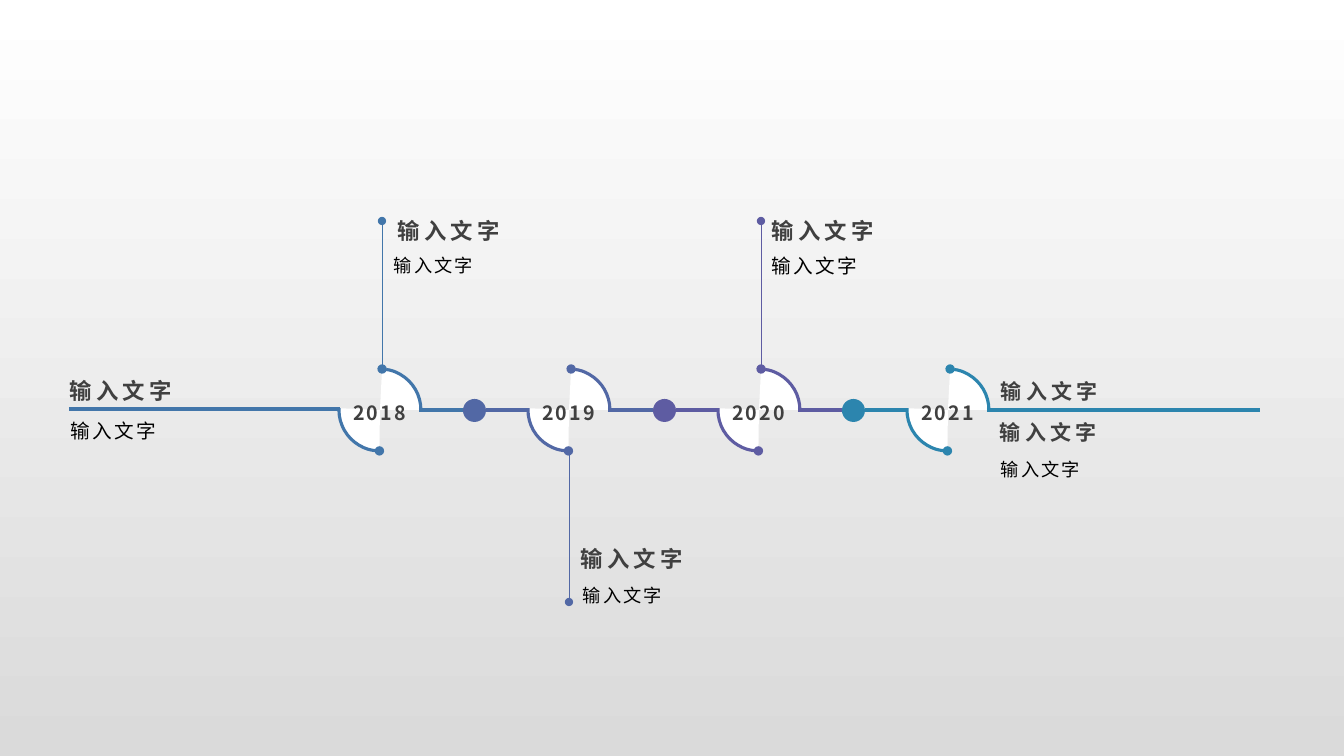
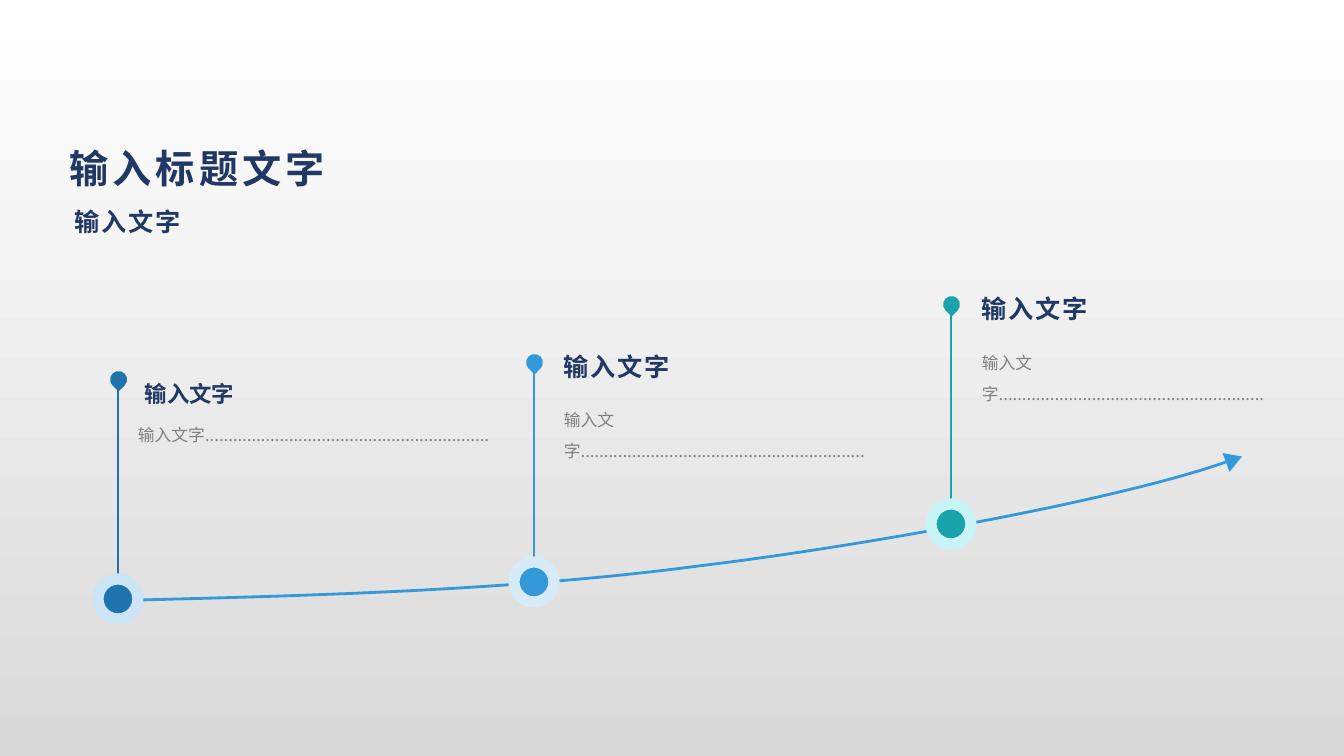
from lxml import etree
from pptx import Presentation, util as u
from pptx.dml.color import RGBColor
from pptx.enum import shapes, text
from pptx.oxml import ns

SHAPE = shapes.MSO_SHAPE
ANCHOR = text.MSO_ANCHOR
ALIGN = text.PP_ALIGN
PX = 12192000 / 1344


def px(n):
    return u.Emu(round(n * PX))


def rgb(color):
    return RGBColor.from_string(color)


class Deck:
    """Holds the shared style and the slide being drawn."""

    FONT = "Noto Sans CJK SC"
    WHITE, BLACK, DARK = "FFFFFF", "000000", "404040"
    NAVY, GREY, SHADE = "203864", "808080", "DADADA"
    LABEL = "输入文字"

    def __init__(self):
        self.prs = Presentation()
        self.prs.slide_width, self.prs.slide_height = px(1344), px(756)
        fill = self.prs.slide_master.background.fill
        fill.gradient()
        fill.gradient_angle = 270
        for stop, color in zip(fill.gradient_stops, (self.WHITE, self.SHADE)):
            stop.color.rgb = rgb(color)

    def new_slide(self, layout):
        self.s = self.prs.slides.add_slide(self.prs.slide_layouts[layout])

    def place(self, sp, x, y, w, h):
        sp.left, sp.top, sp.width, sp.height = px(x), px(y), px(w), px(h)

    def set_text(self, sp, txt, size, color, bold=False, spc=0, ls=1.0,
                 anchor=ANCHOR.TOP, align=ALIGN.LEFT, font=FONT):
        tf = sp.text_frame
        tf.text = txt
        tf.word_wrap = True
        tf.auto_size = text.MSO_AUTO_SIZE.NONE
        tf.vertical_anchor = anchor
        p = tf.paragraphs[0]
        p.alignment, p.line_spacing = align, ls
        r = p.runs[0]
        r.font.size, r.font.bold, r.font.name = u.Pt(size), bold, font
        r.font.color.rgb = rgb(color)
        rPr = r._r.get_or_add_rPr()
        rPr.set("spc", str(round(spc * 100)))
        etree.SubElement(rPr, ns.qn("a:ea")).set("typeface", self.FONT)
        return tf

    def text(self, x, y, w, h, txt, size, color, **style):
        sp = self.s.shapes.add_textbox(px(x), px(y), px(w), px(h))
        return self.set_text(sp, txt, size, color, **style)

    def title(self, x, y, w, h, txt):
        sp = self.s.shapes.title
        self.place(sp, x, y, w, h)
        self.set_text(sp, txt, 28, self.NAVY, bold=True, spc=3,
                      anchor=ANCHOR.BOTTOM, font="Arial")

    def heading(self, x, bottom, size):
        tf = self.text(x, bottom - 45, 280, 45, self.LABEL, size, self.DARK,
                       bold=True, spc=3, ls=1.2, anchor=ANCHOR.BOTTOM)
        tf.margin_bottom = 0

    def note(self, x, y, size):
        tf = self.text(x, y, 280, 45, self.LABEL, size, self.BLACK,
                       spc=1.5, ls=1.2)
        tf.margin_top = 0

    def subheading(self, x, y):
        self.text(x, y, 300, 42, self.LABEL, 18, self.NAVY, bold=True,
                  spc=1.2, anchor=ANCHOR.MIDDLE)

    def outline(self, sp, color, width, end=None):
        sp.line.color.rgb = rgb(color)
        sp.line.width = u.Pt(width)
        if end:
            ln = sp.line._get_or_add_ln()
            etree.SubElement(ln, ns.qn(f"a:{end}")).set("type", "oval")

    def shape(self, kind, x, y, w, h, fill, rotation=0):
        sp = self.s.shapes.add_shape(kind, px(x), px(y), px(w), px(h))
        sp.shadow.inherit = False
        sp.rotation = rotation
        sp.fill.solid()
        sp.fill.fore_color.rgb = rgb(fill)
        sp.line.fill.background()
        return sp

    def line(self, x1, y1, x2, y2, color, width, end=None):
        sp = self.s.shapes.add_connector(
            shapes.MSO_CONNECTOR.STRAIGHT, px(x1), px(y1), px(x2), px(y2))
        self.outline(sp, color, width, end)
        etree.SubElement(sp._element.spPr, ns.qn("a:effectLst"))

    def arc(self, x, y, size, start, stop, color):
        sp = self.shape(SHAPE.ARC, x, y, size, size, self.WHITE)
        sp.adjustments[0], sp.adjustments[1] = start, stop
        self.outline(sp, color, 2.25, "headEnd")

    def curve(self, start, beziers, color, width, steps=24):
        points, a = [], start
        for b, c, d in beziers:
            for i in range(1, steps + 1):
                t = i / steps
                k = (1 - t) ** 3, 3 * t * (1 - t) ** 2, 3 * t * t * (1 - t), t ** 3
                points.append(tuple(
                    px(sum(f * v for f, v in zip(k, axis)))
                    for axis in zip(a, b, c, d)))
            a = d
        builder = self.s.shapes.build_freeform(px(start[0]), px(start[1]))
        builder.add_line_segments(points, close=False)
        sp = builder.convert_to_shape()
        sp.shadow.inherit = False
        sp.fill.background()
        self.outline(sp, color, width)


def years_slide(d):
    d.new_slide(6)
    colors = ["4276AA", "5268A5", "5E5CA2", "2C85AE"]
    lefts = [339 + 379 * i // 2 for i in range(4)]
    axis = 410

    for i, offset, y1, y2 in [(0, 43, 369, 221), (1, 41, 452, 602), (2, 43, 369, 221)]:
        x = lefts[i] + offset
        d.line(x, y1, x, y2, colors[i], 0.25, "tailEnd")

    for i, (x, color) in enumerate(zip(lefts, colors)):
        d.arc(x, 369, 82, 54.43, 109.45, color)
        d.arc(x, 369, 82, 163.83, 215.95, color)
        d.text(x - 2, 388, 85, 44, str(2018 + i), 14, d.DARK, bold=True, spc=1.5,
               ls=1.2, anchor=ANCHOR.MIDDLE, align=ALIGN.CENTER)

    for x, following, color, next_color in zip(lefts, lefts[1:], colors, colors[1:]):
        dot = following - 65
        d.line(x + 80, axis, dot, axis, color, 2.25)
        d.shape(SHAPE.OVAL, dot, 399, 23, 23, next_color)
        d.line(dot + 23, axis, following, axis, next_color, 2.25)
    d.line(69, 409, 340, 409, colors[0], 2.25)
    d.line(987, axis, 1260, axis, colors[-1], 2.25)

    for x, bottom, size in [(60, 404, 16), (388, 244, 16), (571, 572, 16),
                            (762, 244, 16), (991, 404, 15), (990, 445, 15)]:
        d.heading(x, bottom, size)
    for x, y, size in [(61, 414, 14), (384, 250, 13), (573, 580, 13),
                       (762, 249, 14), (991, 454, 13)]:
        d.note(x, y, size)


def growth_slide(d):
    d.new_slide(5)
    d.title(59, 118, 392, 78, "输入标题文字")
    d.subheading(65, 200)
    blue = "3498DB"
    d.curve((101, 601), [((305, 596), (510, 591), (699, 566)),
                         ((888, 543), (1144, 494), (1234, 459))], blue, 2)
    d.shape(SHAPE.ISOSCELES_TRIANGLE, 1224, 451, 20, 17, blue, 69.7)

    for x, y, color, halo in [(118, 371, "1F74AD", "CBE5F6"),
                              (534, 354, blue, "D6EAF8"),
                              (951, 296, "1AA3AA", "C9F4F7")]:
        d.line(x, y + 14, x, y + 204, color, 2)
        sp = d.shape(SHAPE.OVAL, x - 20, y + 208, 40, 40, color)
        d.outline(sp, halo, 8)
        d.shape(SHAPE.TEAR, x - 8, y, 17, 17, color, 135)

    d.text(135, 364, 334, 87, d.LABEL, 16, d.NAVY, bold=True, ls=1.4)
    d.subheading(554, 345)
    d.subheading(972, 287)
    for x, y, w, dots in [(128, 410, 394, 61), (554, 395, 357, 61), (972, 338, 320, 57)]:
        d.text(x, y, w, 180, d.LABEL + "." * dots, 12, d.GREY, ls=1.5)


def main():
    d = Deck()
    years_slide(d)
    growth_slide(d)
    d.prs.save("out.pptx")


if __name__ == "__main__":
    main()
